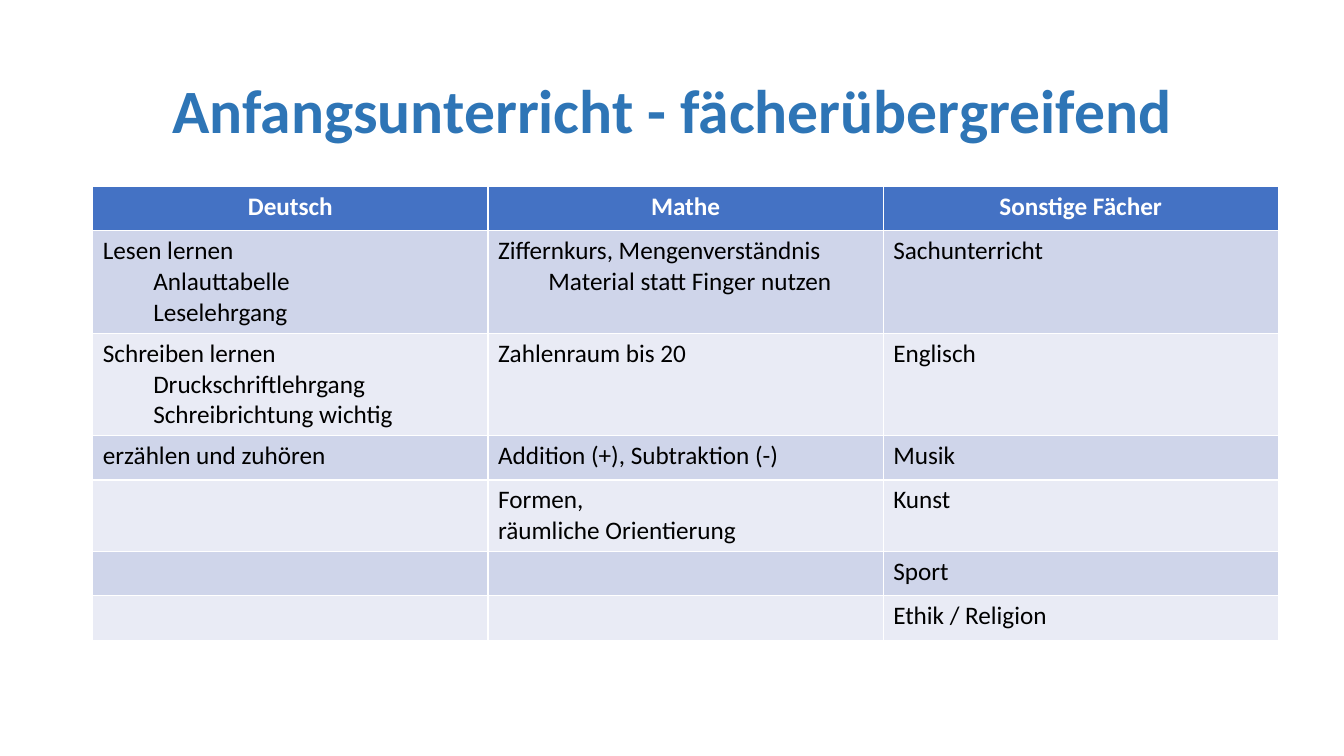
"""Builds a slide with a table of first-year lessons across school subjects."""
from pptx import Presentation
from pptx import util as u
from pptx.dml.color import RGBColor
from pptx.enum import text

TITLE_BLUE = RGBColor(0x2E, 0x75, 0xB6)
HEADER_BLUE = RGBColor(0x44, 0x72, 0xC4)
BAND_DARK = RGBColor(0xCF, 0xD5, 0xEA)
BAND_LIGHT = RGBColor(0xE9, 0xEB, 0xF5)
WHITE = RGBColor(0xFF, 0xFF, 0xFF)
BLACK = RGBColor(0x00, 0x00, 0x00)

HEADINGS = ["Deutsch", "Mathe", "Sonstige Fächer"]
LESSONS = [
    ["Lesen lernen\n\tAnlauttabelle\n\tLeselehrgang",
     "Ziffernkurs, Mengenverständnis\n\tMaterial statt Finger nutzen",
     "Sachunterricht"],
    ["Schreiben lernen\n\tDruckschriftlehrgang Schreibrichtung wichtig",
     "Zahlenraum bis 20", "Englisch"],
    ["erzählen und zuhören", "Addition (+), Subtraktion (-)", "Musik"],
    ["", "Formen,\nräumliche Orientierung", "Kunst"],
    ["", "", "Sport"],
    ["", "", "Ethik / Religion"],
]


class SlideBuilder:
    font_name = "Calibri"
    title_size = u.Pt(44)
    table_size = u.Pt(18)

    def __init__(self, presentation):
        self.slide = presentation.slides.add_slide(presentation.slide_layouts[5])

    def style(self, paragraph, size, color, bold=False, centered=False):
        font = paragraph.font
        font.name, font.size, font.bold = self.font_name, size, bold
        font.color.rgb = color
        paragraph.alignment = text.PP_ALIGN.CENTER if centered else text.PP_ALIGN.LEFT

    def title(self, wording, left, top, width, height):
        shape = self.slide.shapes.title
        shape.left, shape.top = u.Inches(left), u.Inches(top)
        shape.width, shape.height = u.Inches(width), u.Inches(height)
        frame = shape.text_frame
        frame.text = wording
        frame.auto_size = text.MSO_AUTO_SIZE.NONE
        frame.vertical_anchor = text.MSO_ANCHOR.MIDDLE
        paragraph = frame.paragraphs[0]
        paragraph.line_spacing = 0.9
        self.style(paragraph, self.title_size, TITLE_BLUE, bold=True, centered=True)

    def cell(self, cell, wording, fill, color, header):
        cell.fill.solid()
        cell.fill.fore_color.rgb = fill
        frame = cell.text_frame
        for index, line in enumerate(wording.split("\n")):
            paragraph = frame.add_paragraph() if index else frame.paragraphs[0]
            paragraph.text = line.lstrip("\t")
            paragraph.level = line.count("\t")
            self.style(paragraph, self.table_size, color, header, header)

    def table(self, rows, left, top, width, height, row_height):
        shape = self.slide.shapes.add_table(
            len(rows), len(rows[0]), u.Inches(left), u.Inches(top),
            u.Inches(width), u.Inches(row_height * len(rows)))
        shape.height = u.Inches(height)
        for row_index, row in enumerate(rows):
            header = row_index == 0
            band = BAND_DARK if row_index % 2 else BAND_LIGHT
            for column_index, wording in enumerate(row):
                self.cell(shape.table.cell(row_index, column_index), wording,
                          HEADER_BLUE if header else band,
                          WHITE if header else BLACK, header)


def main():
    presentation = Presentation()
    presentation.slide_width = u.Inches(13.33)
    presentation.slide_height = u.Inches(7.5)
    builder = SlideBuilder(presentation)
    builder.title("Anfangsunterricht - fächerübergreifend", 0.92, 0.4, 11.5, 1.45)
    builder.table([HEADINGS] + LESSONS, 0.92, 1.85, 11.76, 4.44, row_height=0.44)
    presentation.save("out.pptx")


if __name__ == "__main__":
    main()
